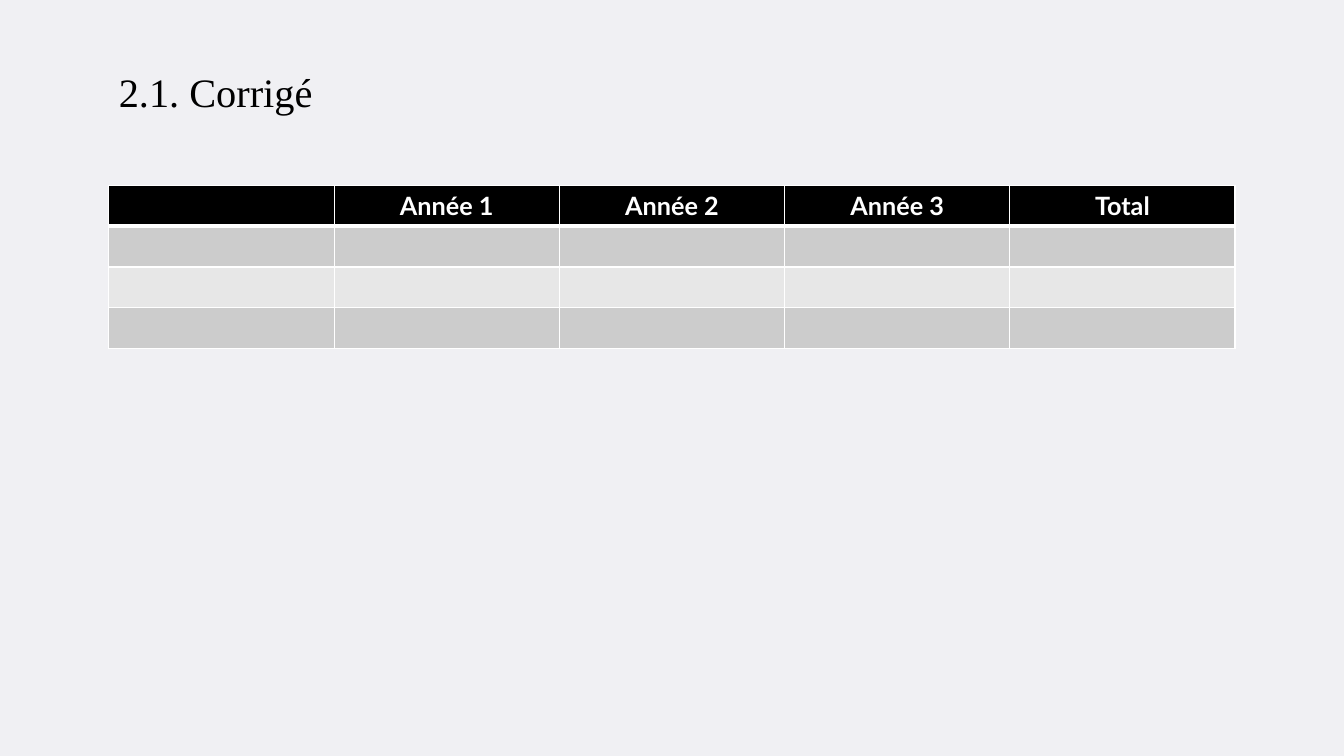
from lxml import etree
from pptx import Presentation
from pptx import util as u
from pptx.dml.color import RGBColor
from pptx.enum import text
from pptx.oxml import ns

BACKGROUND = RGBColor(0xF0, 0xF0, 0xF3)
BLACK = RGBColor(0x00, 0x00, 0x00)
WHITE = RGBColor(0xFF, 0xFF, 0xFF)
DARK_BAND = RGBColor(0xCC, 0xCC, 0xCC)
LIGHT_BAND = RGBColor(0xE7, 0xE7, 0xE7)

HEADINGS = ["", "Année 1", "Année 2", "Année 3", "Total"]
ROW_FILLS = [BLACK, DARK_BAND, LIGHT_BAND, DARK_BAND]

SLIDE_WIDTH, SLIDE_HEIGHT = u.Inches(13.33), u.Inches(7.5)
MARGIN = u.Inches(1.08)
CONTENT_WIDTH = SLIDE_WIDTH - 2 * MARGIN


def format_run(run, font_name, size, color, bold=False):
    run.font.name = font_name
    run.font.size = u.Pt(size)
    run.font.color.rgb = color
    run.font.bold = bold


def add_title(slide, left, top, width, height):
    box = slide.shapes.add_textbox(left, top, width, height)
    frame = box.text_frame
    frame.word_wrap = True
    frame.vertical_anchor = text.MSO_ANCHOR.BOTTOM
    frame.margin_bottom = int(height * 0.41)
    frame.text = "2.1. Corrigé"
    format_run(frame.paragraphs[0].runs[0], "Times New Roman", 28.8, BLACK)


def set_border(cell, side, width, color):
    properties = cell._tc.get_or_add_tcPr()
    line = etree.SubElement(properties, ns.qn(f"a:ln{side}"), w=str(u.Pt(width)))
    fill = etree.SubElement(line, ns.qn("a:solidFill"))
    etree.SubElement(fill, ns.qn("a:srgbClr"), val=str(color))


def add_year_table(slide, left, top, width, height):
    rows, columns = len(ROW_FILLS), len(HEADINGS)
    table = slide.shapes.add_table(rows, columns, left, top, width, height).table

    # Banded cells; a thick rule separates the heading row from the body
    for row, fill in enumerate(ROW_FILLS):
        for column in range(columns):
            cell = table.cell(row, column)
            for side in "LRTB":
                is_rule = (row, side) in [(0, "B"), (1, "T")]
                set_border(cell, side, 3 if is_rule else 1, WHITE)
            cell.fill.solid()
            cell.fill.fore_color.rgb = fill

    # Heading labels
    for column, heading in enumerate(HEADINGS):
        cell = table.cell(0, column)
        cell.vertical_anchor = text.MSO_ANCHOR.MIDDLE
        cell.text_frame.text = heading
        paragraph = cell.text_frame.paragraphs[0]
        paragraph.alignment = text.PP_ALIGN.CENTER
        for run in paragraph.runs:
            format_run(run, "Lato", 18, WHITE, bold=True)


def main():
    presentation = Presentation()
    presentation.slide_width, presentation.slide_height = SLIDE_WIDTH, SLIDE_HEIGHT
    slide = presentation.slides.add_slide(presentation.slide_layouts[6])
    slide.background.fill.solid()
    slide.background.fill.fore_color.rgb = BACKGROUND

    add_title(slide, MARGIN, u.Inches(0.43), CONTENT_WIDTH, u.Inches(1.22))
    add_year_table(slide, MARGIN, u.Inches(1.84), CONTENT_WIDTH, u.Inches(1.62))
    presentation.save("out.pptx")


if __name__ == "__main__":
    main()
